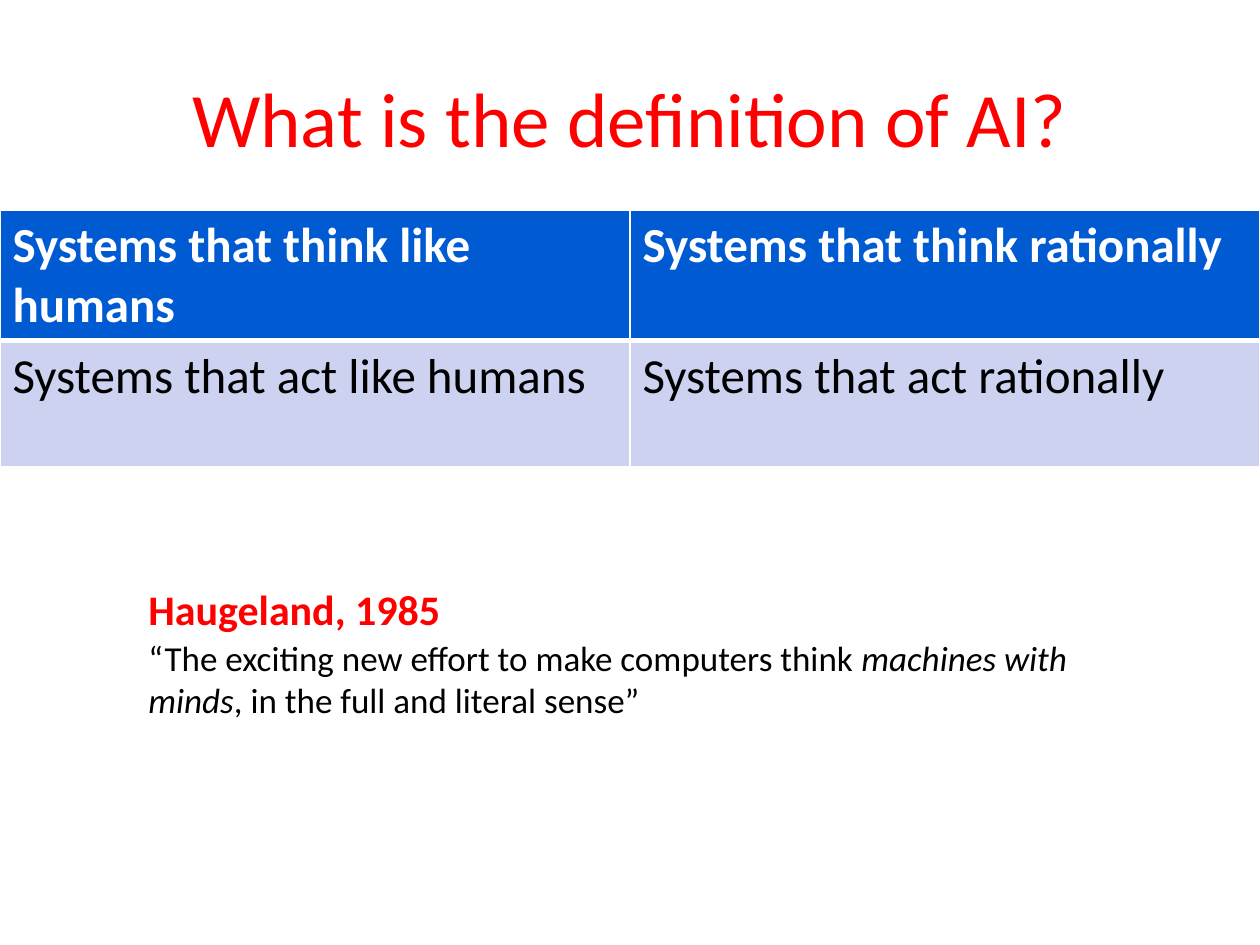
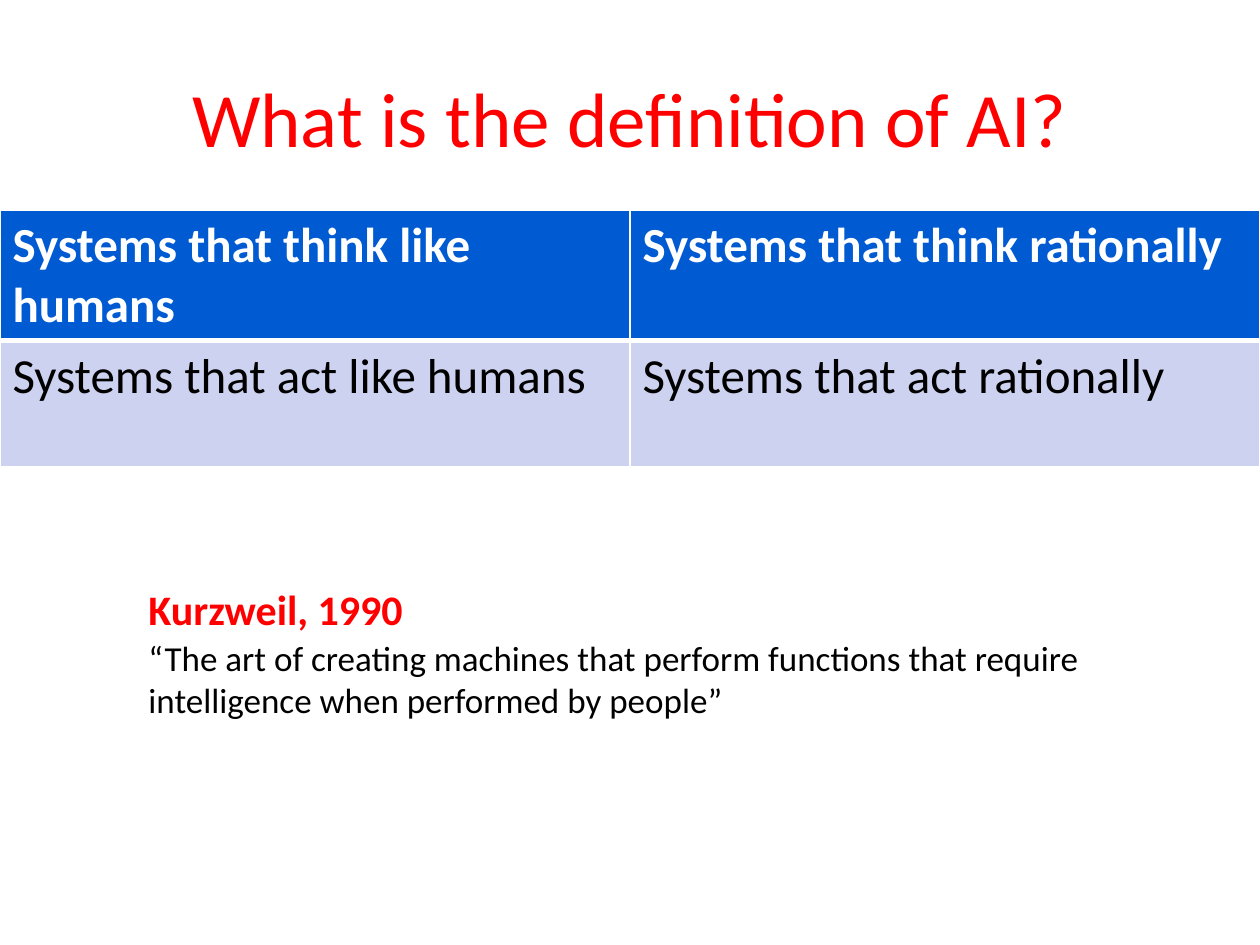
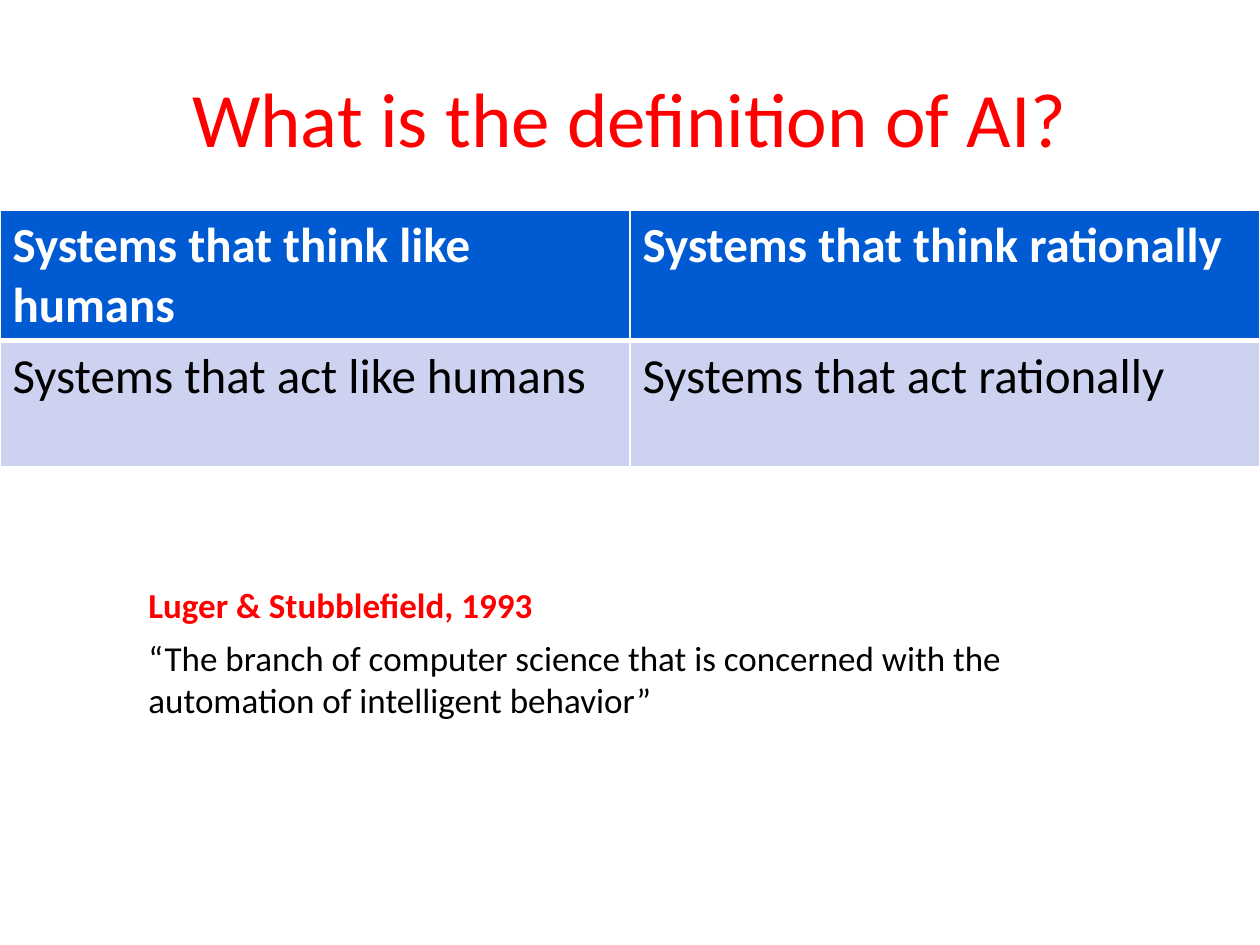
import pptx
import pptx.dml.color
import pptx.enum.text
import pptx.oxml
import pptx.oxml.ns
import pptx.util
from dataclasses import dataclass

PX_PER_INCH = 126


@dataclass(frozen=True)
class Theme:
    font: str = "Calibri"
    accent: str = "FF0000"
    text: str = "000000"
    white: str = "FFFFFF"
    header_fill: str = "005BD3"
    body_fill: str = "CCD2EF"
    title_size: int = 44
    table_size: int = 28
    author_size: int = 24
    quote_size: int = 20
    thin_line: int = 1
    thick_line: int = 3


THEME = Theme()

TITLE = "What is the definition of AI?"
APPROACHES = [
    ["Systems that think like humans", "Systems that think rationally"],
    ["Systems that act like humans", "Systems that act rationally"],
]

# Each definition: author, author width and height, author size, quote spans
DEFINITIONS = [
    ("Haugeland, 1985", 320, 63, THEME.author_size,
     [("“The exciting new effort to make computers think ", False),
      ("machines with minds", True),
      (", in the full and literal sense”", False)]),
    ("Kurzweil, 1990", 282, 63, THEME.author_size,
     [("“The art of creating machines that perform functions that require "
       "intelligence when performed by people”", False)]),
    ("Luger & Stubblefield, 1993", 413, 55, THEME.quote_size,
     [("“The branch of computer science that is concerned with the "
       "automation of intelligent behavior”", False)]),
]


def px(length):
    return pptx.util.Inches(length / PX_PER_INCH)


# Text
def add_span(para, text, size, color, bold=False, italic=False):
    span = para.add_run()
    span.text = text
    formats = {"name": THEME.font, "size": pptx.util.Pt(size),
               "bold": bold, "italic": italic}
    for name, value in formats.items():
        setattr(span.font, name, value)
    span.font.color.rgb = pptx.dml.color.RGBColor.from_string(color)


def add_text_box(page, left, top, width, height, **formats):
    box = page.shapes.add_textbox(px(left), px(top), px(width), px(height))
    for name, value in {"word_wrap": True, **formats}.items():
        setattr(box.text_frame, name, value)
    return box.text_frame.paragraphs[0]


def add_title(page):
    para = add_text_box(page, 63, 38, 1134, 157,
                        vertical_anchor=pptx.enum.text.MSO_ANCHOR.MIDDLE)
    para.alignment = pptx.enum.text.PP_ALIGN.CENTER
    add_span(para, TITLE, THEME.title_size, THEME.accent)


def add_definition(page, author, width, height, author_size, quote):
    grow = pptx.enum.text.MSO_AUTO_SIZE.SHAPE_TO_FIT_TEXT
    para = add_text_box(page, 136, 577, width, height,
                        word_wrap=False, auto_size=grow)
    add_span(para, author, author_size, THEME.accent, bold=True)
    para = add_text_box(page, 136, 630, 1040, 97, auto_size=grow)
    for text, italic in quote:
        add_span(para, text, THEME.quote_size, THEME.text, italic=italic)


# Table
def set_borders(cell, is_header):
    widths = {"L": THEME.thin_line, "R": THEME.thin_line,
              "T": THEME.thin_line if is_header else THEME.thick_line,
              "B": THEME.thick_line if is_header else THEME.thin_line}
    properties = cell._tc.get_or_add_tcPr()
    for side, width in widths.items():
        properties.append(pptx.oxml.parse_xml(
            f'<a:ln{side} {pptx.oxml.ns.nsdecls("a")} w="{pptx.util.Pt(width)}">'
            f'<a:solidFill><a:srgbClr val="{THEME.white}"/></a:solidFill>'
            f'</a:ln{side}>'))


def add_approach_table(page):
    row_heights = [130, 126]
    table = page.shapes.add_table(2, 2, 0, px(210), px(1260),
                                  px(sum(row_heights))).table
    for row_index, (height, texts) in enumerate(zip(row_heights, APPROACHES)):
        table.rows[row_index].height = px(height)
        is_header = row_index == 0
        fill = THEME.header_fill if is_header else THEME.body_fill
        color = THEME.white if is_header else THEME.text
        for column_index, text in enumerate(texts):
            cell = table.cell(row_index, column_index)
            set_borders(cell, is_header)
            cell.fill.solid()
            cell.fill.fore_color.rgb = pptx.dml.color.RGBColor.from_string(fill)
            add_span(cell.text_frame.paragraphs[0], text, THEME.table_size,
                     color, bold=is_header)


def main():
    deck = pptx.Presentation()
    deck.slide_width, deck.slide_height = px(1260), px(945)
    for definition in DEFINITIONS:
        page = deck.slides.add_slide(deck.slide_layouts[6])
        add_title(page)
        add_approach_table(page)
        add_definition(page, *definition)
    deck.save("out.pptx")


if __name__ == "__main__":
    main()
